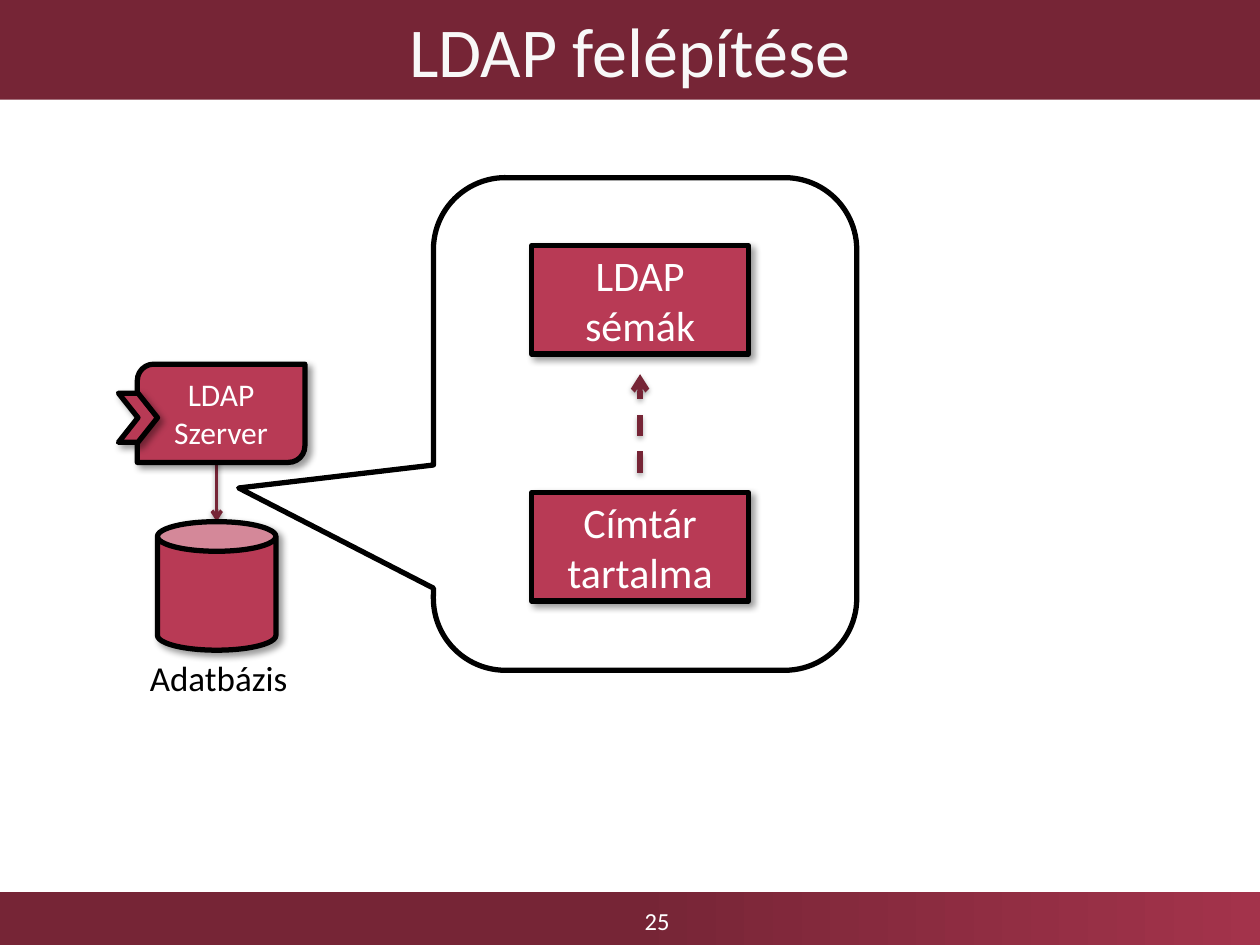
from dataclasses import dataclass

from lxml.etree import SubElement
from pptx import Presentation
from pptx.dml.color import RGBColor
from pptx.enum.dml import MSO_LINE
from pptx.enum.shapes import MSO_CONNECTOR, MSO_SHAPE as Shape
from pptx.enum.text import MSO_ANCHOR, PP_ALIGN
from pptx.oxml.ns import qn
from pptx.util import Inches, Pt


@dataclass(frozen=True)
class Theme:
    font: str = "Calibri"
    band: str = "762536"
    band_end: str = "A3334B"
    node: str = "B83A55"
    ink: str = "000000"
    light: str = "FFFFFF"
    title: str = "F8F8F8"
    title_size: int = 40
    box_size: int = 24
    label_size: int = 20
    server_size: int = 18
    number_size: int = 14
    outline: int = 3


@dataclass(frozen=True)
class Shadow:
    alpha: int
    blur: float
    distance: float
    angle: int


THEME = Theme()
NODE_SHADOW = Shadow(40, 4, 3, 45)


def rgb(value):
    return RGBColor.from_string(value)


def add_shadow(effects, shadow):
    outer = SubElement(
        effects, qn("a:outerShdw"), blurRad=str(Pt(shadow.blur)),
        dist=str(Pt(shadow.distance)), dir=str(shadow.angle * 60000),
        algn="ctr", rotWithShape="0")
    color = SubElement(outer, qn("a:srgbClr"), val=THEME.ink)
    SubElement(color, qn("a:alpha"), val=str(shadow.alpha * 1000))


def write(shape, text, size, color, align=PP_ALIGN.CENTER,
          anchor=MSO_ANCHOR.MIDDLE, wrap=True):
    frame = shape.text_frame
    frame.text = text
    frame.word_wrap = wrap
    frame.vertical_anchor = anchor
    for para in frame.paragraphs:
        para.alignment = align
        for span in para.runs:
            span.font.name = THEME.font
            span.font.size = Pt(size)
            span.font.color.rgb = rgb(color)


def add_shape(page, kind, bounds, fill=None):
    shape = page.shapes.add_shape(kind, *map(Inches, bounds))
    shape.shadow.inherit = False
    if fill:
        shape.fill.solid()
        shape.fill.fore_color.rgb = rgb(fill)
    else:
        shape.fill.background()
    shape.line.fill.background()
    return shape


def add_outlined(page, kind, bounds, fill=None):
    shape = add_shape(page, kind, bounds, fill)
    shape.line.color.rgb = rgb(THEME.ink)
    shape.line.width = Pt(THEME.outline)
    return shape


def add_node(page, kind, bounds, text="", size=THEME.box_size):
    node = add_outlined(page, kind, bounds, THEME.node)
    add_shadow(node._element.spPr.find(qn("a:effectLst")), NODE_SHADOW)
    if text:
        write(node, text, size, THEME.light)


def add_arrow(page, start, end, width, shadow, dash=None):
    arrow = page.shapes.add_connector(
        MSO_CONNECTOR.STRAIGHT, *map(Inches, (*start, *end)))
    arrow.line.color.rgb = rgb(THEME.band)
    arrow.line.width = Pt(width)
    if dash:
        arrow.line.dash_style = dash
    properties = arrow._element.spPr
    SubElement(properties.find(qn("a:ln")), qn("a:tailEnd"), type="arrow")
    add_shadow(SubElement(properties, qn("a:effectLst")), shadow)


def add_label(page, bounds, text, size, color, **layout):
    box = page.shapes.add_textbox(*map(Inches, bounds))
    write(box, text, size, color, **layout)


def add_footer(page):
    footer = add_shape(page, Shape.RECTANGLE, (0, 7.08, 10, 0.42), THEME.band)
    footer.fill.gradient()
    footer.fill.gradient_angle = 0
    stops = zip(footer.fill.gradient_stops, (0.5, 1),
                (THEME.band, THEME.band_end))
    for stop, position, color in stops:
        stop.position = position
        stop.color.rgb = rgb(color)
    add_label(page, (3.59, 7.11, 3.25, 0.39), "25", THEME.number_size,
              THEME.light)


def add_title(page):
    title = add_shape(page, Shape.RECTANGLE, (0, 0, 10, 0.79), THEME.band)
    write(title, "LDAP felépítése", THEME.title_size, THEME.title)


def add_server(page):
    add_arrow(page, (1.72, 3.59), (1.72, 4.14), 2, Shadow(38, 3.1, 1.6, 90))
    add_node(page, Shape.CAN, (1.25, 4.14, 0.94, 1.02))
    add_label(page, (1.09, 5.16, 1.31, 0.44), "Adatbázis",
              THEME.label_size, THEME.ink, align=PP_ALIGN.LEFT,
              anchor=MSO_ANCHOR.TOP, wrap=False)
    add_node(page, Shape.ROUND_2_DIAG_RECTANGLE, (1.09, 2.89, 1.33, 0.78),
             "LDAP\nSzerver", THEME.server_size)
    add_node(page, Shape.CHEVRON, (0.94, 3.12, 0.31, 0.39))


def add_directory(page):
    callout = add_outlined(page, Shape.ROUNDED_RECTANGULAR_CALLOUT,
                           (3.44, 1.41, 3.36, 3.91))
    for index, value in enumerate((-0.96, 0.13, 0.17)):
        callout.adjustments[index] = value
    for top, text in ((1.95, "LDAP\nsémák"), (3.91, "Címtár\vtartalma")):
        add_node(page, Shape.RECTANGLE, (4.22, top, 1.72, 0.86), text)
    add_arrow(page, (5.08, 3.75), (5.08, 2.97), THEME.outline,
              Shadow(35, 3.1, 1.8, 90), MSO_LINE.DASH)


def main():
    deck = Presentation()
    deck.slide_width = Inches(10)
    deck.slide_height = Inches(7.5)
    page = deck.slides.add_slide(deck.slide_layouts[6])
    add_footer(page)
    add_title(page)
    add_server(page)
    add_directory(page)
    deck.save("out.pptx")


if __name__ == "__main__":
    main()
